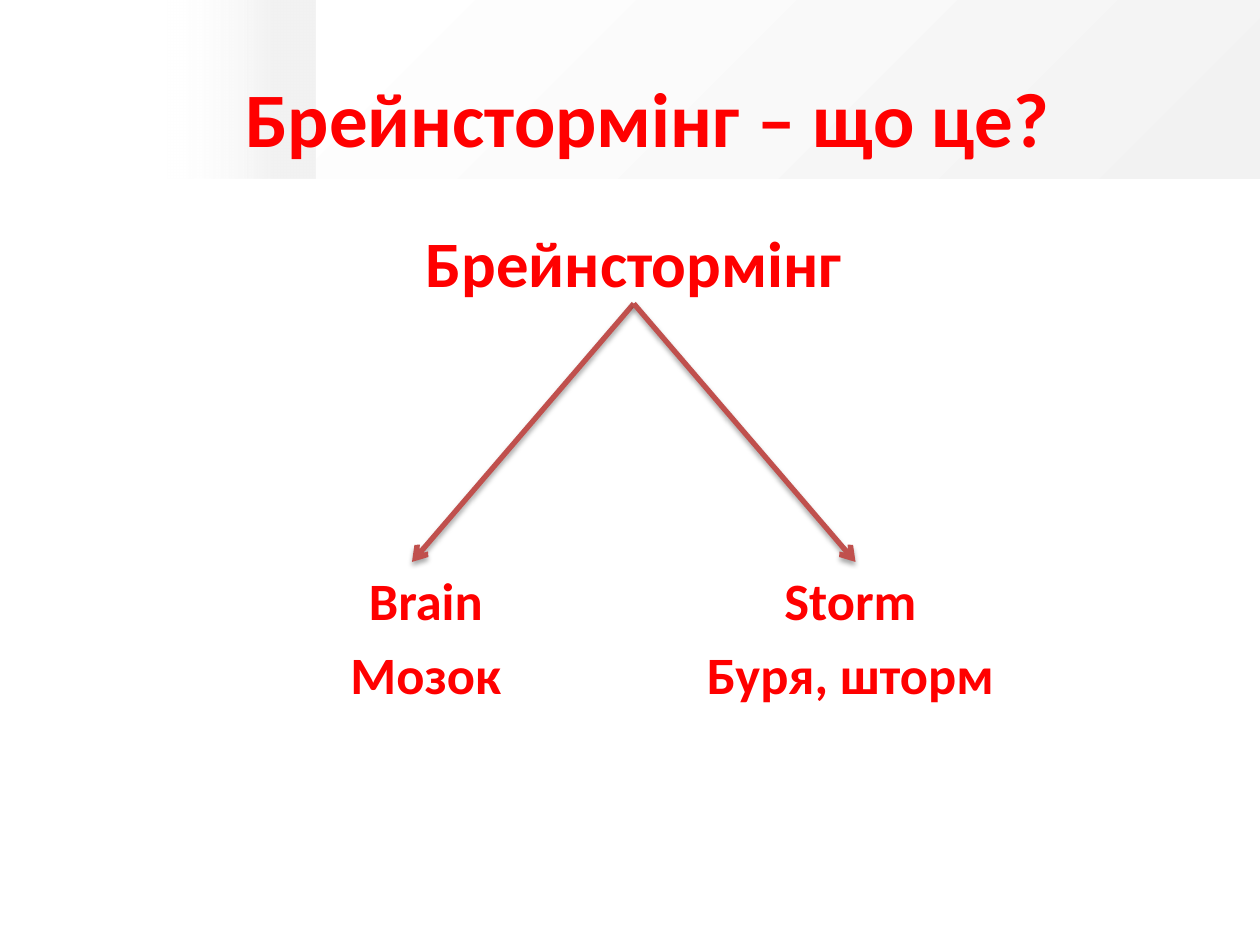
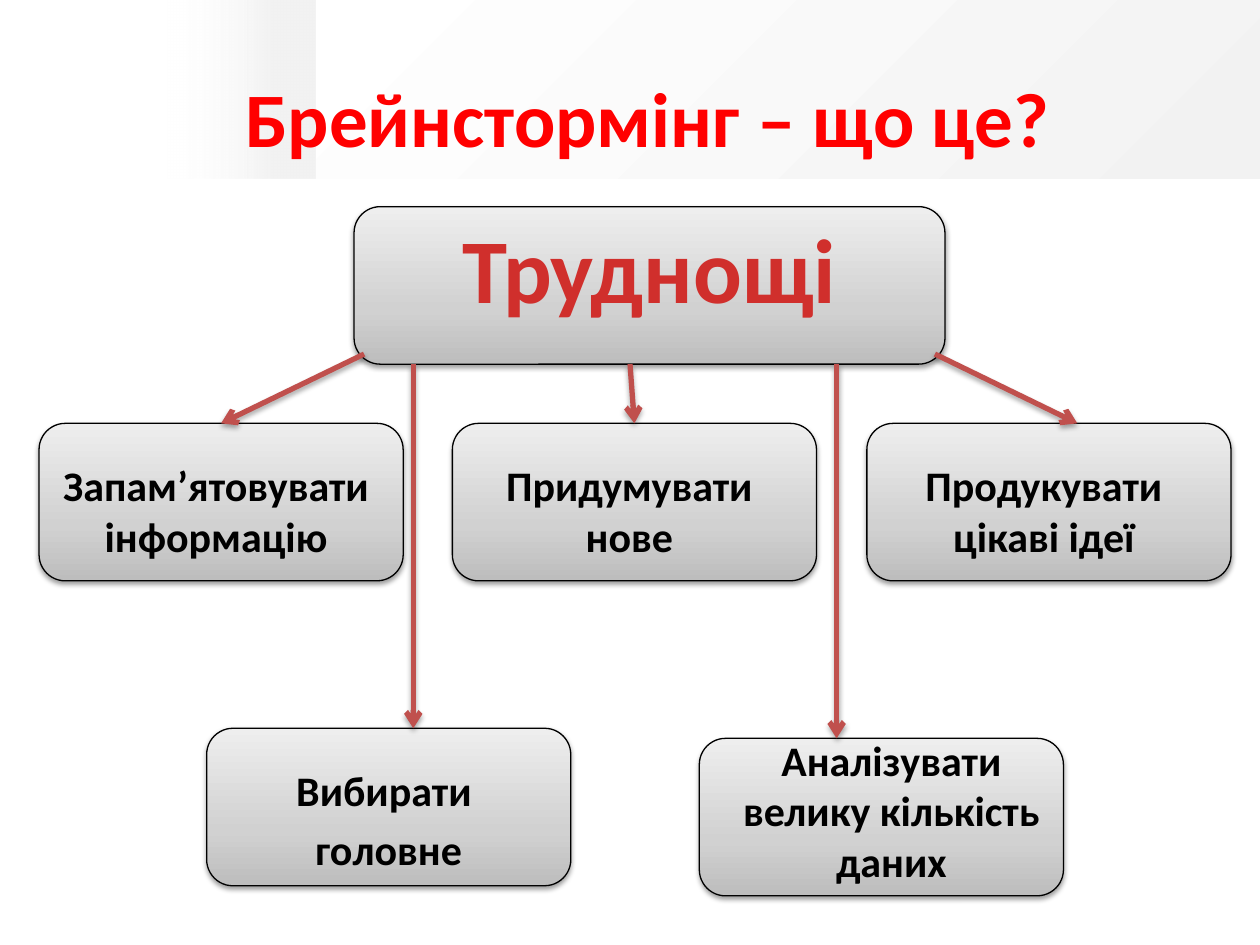
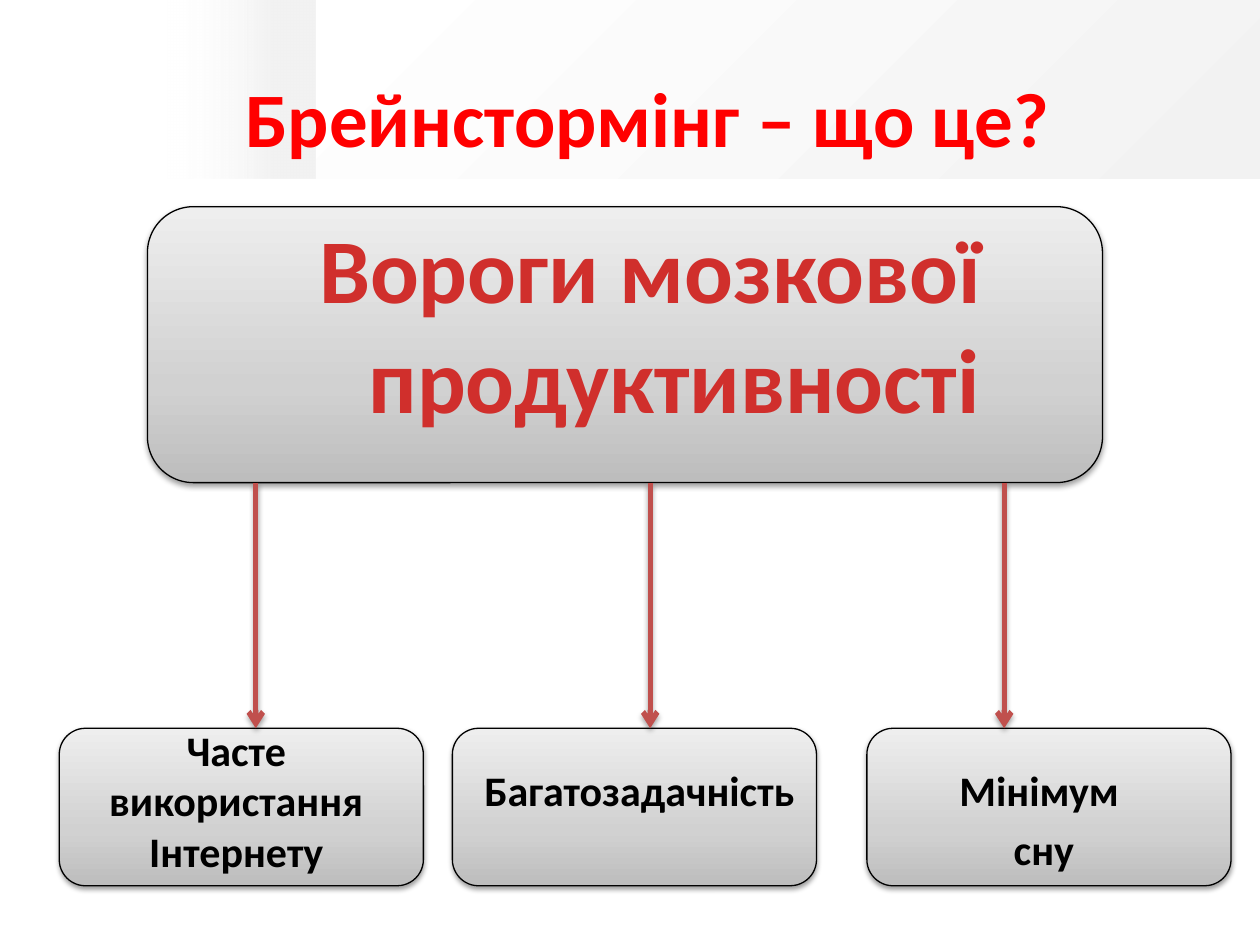
from pptx import Presentation
from pptx.dml.color import RGBColor
from pptx.enum.shapes import MSO_CONNECTOR, MSO_SHAPE
from pptx.enum.text import MSO_ANCHOR, MSO_AUTO_SIZE, PP_ALIGN
from pptx.oxml.ns import qn
from pptx.oxml.xmlchemy import OxmlElement
from pptx.util import Inches, Pt

RECT = MSO_SHAPE.RECTANGLE
ROUNDED = MSO_SHAPE.ROUNDED_RECTANGLE
STRAIGHT = MSO_CONNECTOR.STRAIGHT
CENTER = PP_ALIGN.CENTER
TOP, MIDDLE = MSO_ANCHOR.TOP, MSO_ANCHOR.MIDDLE
NO_FIT = MSO_AUTO_SIZE.NONE

FONT = "Calibri"
RED = RGBColor(0xFF, 0x00, 0x00)
BRICK = RGBColor(0xC0, 0x50, 0x4D)
BLACK = RGBColor(0x00, 0x00, 0x00)
WHITE = RGBColor(0xFF, 0xFF, 0xFF)
PALE = RGBColor(0xF2, 0xF2, 0xF2)
CARD_STOPS = [(0, RGBColor(0xBD, 0xBD, 0xBD)), (35, RGBColor(0xD1, 0xD1, 0xD1)),
              (100, RGBColor(0xEE, 0xEE, 0xEE))]
HEADING_STOPS = [(0, RGBColor(0xFC, 0x7C, 0x7A)), (75, RGBColor(0xD0, 0x2F, 0x2C)),
                 (100, RGBColor(0xC7, 0x05, 0x00))]

TITLE = "Брейнстормінг – що це?"
TITLE_BOX = (0.78, 0.3, 8.72, 1.25)
BAND_HEIGHT = 1.42
CARD_W, CARD_H = 2.89, 1.25
LABEL_W = 2.81
LABEL_DROP, TALL_LABEL_DROP = 0.24, -0.08
HANGING = 0.38
TOP_SIDE, BOTTOM_SIDE = 0, 2


def inches(box):
    return [Inches(value) for value in box]


def child(parent, tag, **attributes):
    element = OxmlElement(tag)
    for key, value in attributes.items():
        element.set(key, str(value))
    parent.append(element)
    return element


def gradient(stops, angle=None):
    fill = OxmlElement("a:gradFill")
    stop_list = child(fill, "a:gsLst")
    for position, color, *alpha in stops:
        stop = child(stop_list, "a:gs", pos=position * 1000)
        srgb = child(stop, "a:srgbClr", val=color)
        if alpha:
            child(srgb, "a:alpha", val=alpha[0] * 1000)
    if angle is None:
        corner = child(fill, "a:path", path="circle")
        child(corner, "a:fillToRect", r=100000, b=100000)
    else:
        child(fill, "a:lin", ang=angle * 60000, scaled=0)
    return fill


def add_shadow(effects, opacity, distance):
    shadow = child(effects, "a:outerShdw", blurRad=Pt(3.1), dist=Pt(distance),
                   dir=90 * 60000, rotWithShape=0)
    color = child(shadow, "a:srgbClr", val=BLACK)
    child(color, "a:alpha", val=opacity * 1000)


def send_to_back(shapes, shape):
    shapes.element.insert(2, shape._element)


def gradient_shape(slide, kind, box, stops, angle=None):
    shape = slide.shapes.add_shape(kind, *inches(box))
    shape.shadow.inherit = False
    shape.line.fill.background()
    properties = shape._element.spPr
    properties.find(qn("a:prstGeom")).addnext(gradient(stops, angle))
    return shape


def write_text(frame, lines, size, color=BLACK, stops=None, hanging=0, anchor=TOP):
    frame.word_wrap = True
    frame.auto_size = NO_FIT
    frame.vertical_anchor = anchor
    for index, line in enumerate(lines):
        paragraph = frame.add_paragraph() if index else frame.paragraphs[0]
        paragraph.alignment = CENTER
        paragraph.space_before = Pt(size * 0.2 if index else 0)
        layout = paragraph._p.get_or_add_pPr()
        layout.set("marL", str(Inches(hanging)))
        layout.set("indent", str(-Inches(hanging)))
        child(layout, "a:buNone")
        run = paragraph.add_run()
        run.text = line
        run.font.name = FONT
        run.font.size = Pt(size)
        run.font.bold = True
        if stops:
            run._r.get_or_add_rPr().insert(0, gradient(stops, 90))
        else:
            run.font.color.rgb = color


def fill_placeholder(placeholder, box, lines, size, **style):
    placeholder.left, placeholder.top, placeholder.width, placeholder.height = inches(box)
    write_text(placeholder.text_frame, lines, size, **style)


def add_label(slide, box, lines, size, color=BLACK):
    label = slide.shapes.add_textbox(*inches(box))
    write_text(label.text_frame, lines, size, color=color)


def add_arrow(slide, start, end, source=None, target=None):
    arrow = slide.shapes.add_connector(STRAIGHT, *inches(start + end))
    if source is not None:
        arrow.begin_connect(source, BOTTOM_SIDE)
    if target is not None:
        arrow.end_connect(target, TOP_SIDE)
    arrow.line.color.rgb = BRICK
    arrow.line.width = Pt(3)
    child(arrow.line._get_or_add_ln(), "a:tailEnd", type="arrow")
    add_shadow(child(arrow._element.spPr, "a:effectLst"), 35, 1.8)


def add_panel(slide, box):
    panel = gradient_shape(slide, ROUNDED, box, CARD_STOPS, 270)
    panel.line.color.rgb = BLACK
    panel.line.width = Pt(0.75)
    add_shadow(panel._element.spPr.find(qn("a:effectLst")), 38, 1.6)
    send_to_back(slide.shapes, panel)
    return panel


def add_card(slide, left, top, lines, drop=LABEL_DROP, shift=0, label_width=LABEL_W):
    panel = add_panel(slide, (left, top, CARD_W, CARD_H))
    add_label(slide, (left + shift, top + drop, label_width, CARD_H), lines, 24)
    return panel


def add_heading(slide, panel_box, text_box, text):
    add_panel(slide, panel_box)
    fill_placeholder(slide.placeholders[1], text_box, [text], 52,
                     stops=HEADING_STOPS, hanging=HANGING)


def add_bands(slide, layout):
    wide = gradient_shape(slide, RECT, (2.5, 0, 7.5, BAND_HEIGHT), [(0, WHITE), (100, PALE)])
    wide._element.spPr.find(qn("a:xfrm")).set("flipH", "1")
    narrow = gradient_shape(slide, RECT, (1.33, 0, 1.17, BAND_HEIGHT),
                            [(0, WHITE, 0), (72, PALE)], 0)
    for number, band in enumerate((narrow, wide)):
        band._element.nvSpPr.cNvPr.set("id", str(100 + number))
        send_to_back(layout.shapes, band)


def titled_slide(deck):
    slide = deck.slides.add_slide(deck.slide_layouts[1])
    fill_placeholder(slide.shapes.title, TITLE_BOX, [TITLE], 44, color=RED, anchor=MIDDLE)
    return slide


def build_word_origin(slide):
    term = slide.placeholders[1]
    fill_placeholder(term, (2.43, 1.72, 5.2, 0.69), ["Брейнстормінг"], 37, color=RED)
    for tip in (3.27, 6.79):
        add_arrow(slide, (5.03, 2.41), (tip, 4.46), source=term)
    for left, lines in ((0.78, ["Brain", "Мозок"]), (4.15, ["Storm", "Буря, шторм"])):
        add_label(slide, (left, 4.46, 5.2, 0.69), lines, 30, color=RED)


def build_difficulties(slide):
    add_heading(slide, (2.81, 1.64, 4.69, 1.25), (2.81, 1.64, 4.69, 0.86), "Труднощі")
    row = 3.36
    memorize = add_card(slide, 0.31, row, ["Запам’ятовувати інформацію"])
    invent = add_card(slide, 3.59, row, ["Придумувати нове"])
    add_card(slide, 6.88, row, ["Продукувати цікаві ідеї"])
    add_card(slide, 1.64, 5.78, ["Вибирати ", "головне"], label_width=CARD_W)
    add_card(slide, 5.55, 5.86, ["Аналізувати велику кількість даних"],
             drop=TALL_LABEL_DROP, shift=0.08, label_width=CARD_W)
    add_arrow(slide, (2.89, 2.81), (1.76, row), target=memorize)
    add_arrow(slide, (7.42, 2.81), (8.55, row))
    add_arrow(slide, (3.28, 2.89), (3.28, 5.78))
    add_arrow(slide, (6.64, 2.89), (6.64, 5.86))
    add_arrow(slide, (5, 2.89), (5.04, row), target=invent)


def build_enemies(slide):
    add_heading(slide, (1.17, 1.64, 7.58, 2.19), (1.02, 1.64, 8.28, 1.09),
                "Вороги мозкової продуктивності")
    row = 5.78
    add_card(slide, 0.47, row, ["Часте використання Інтернету"], drop=TALL_LABEL_DROP)
    add_card(slide, 3.59, row, ["Багатозадачність"], label_width=2.97)
    add_card(slide, 6.88, row, ["Мінімум ", "сну"])
    for x in (2.03, 5.16, 7.97):
        add_arrow(slide, (x, 3.83), (x, row))


def main():
    deck = Presentation()
    deck.slide_width, deck.slide_height = Inches(10), Inches(7.5)
    for build in (build_word_origin, build_difficulties, build_enemies):
        build(titled_slide(deck))
    add_bands(deck.slides[0], deck.slide_layouts[1])
    deck.save("out.pptx")


if __name__ == "__main__":
    main()
